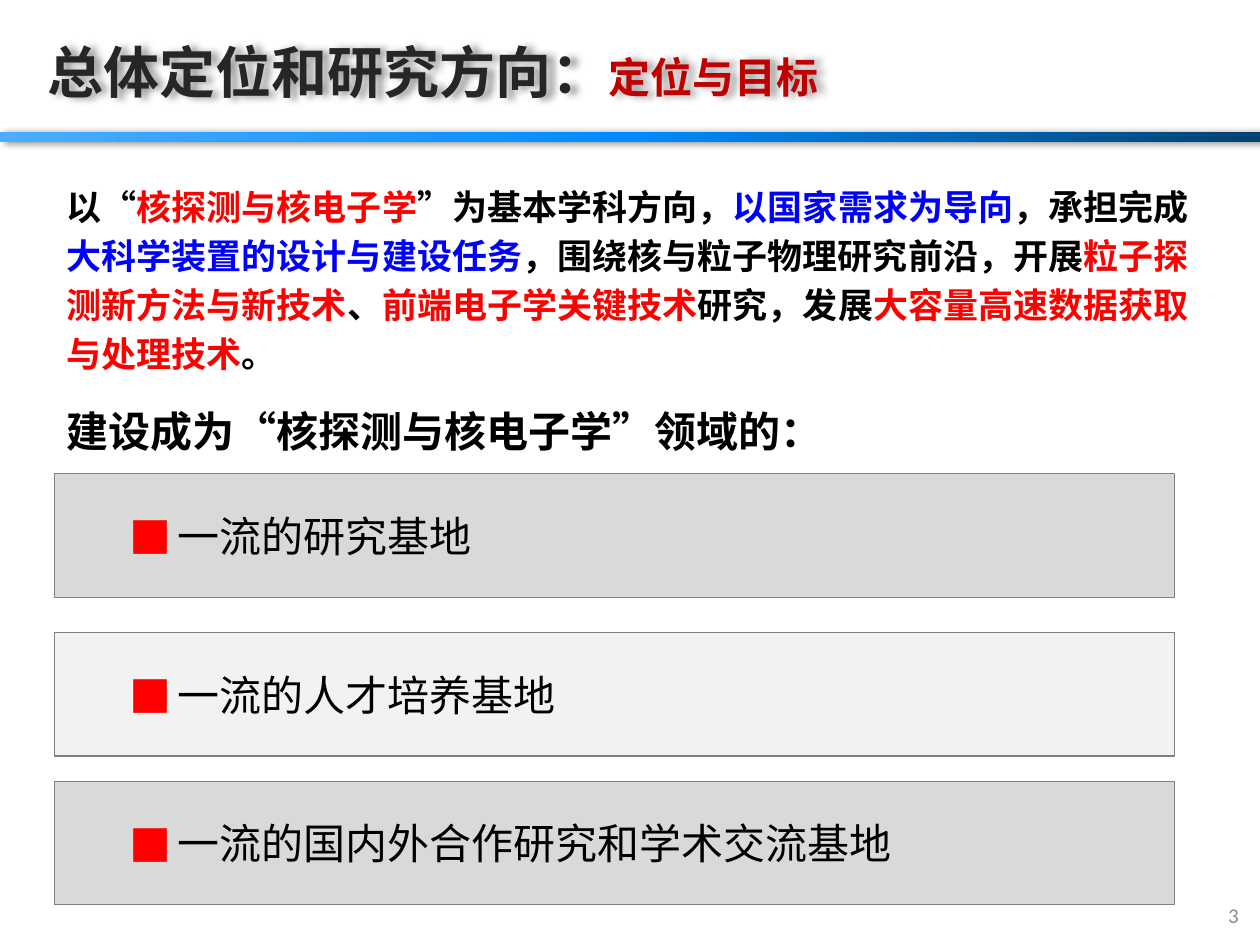
import copy
from dataclasses import dataclass

import pptx
import pptx.dml.color
import pptx.enum.lang
import pptx.enum.shapes
import pptx.enum.text
import pptx.oxml
import pptx.oxml.ns
import pptx.util
from pptx.util import Inches

CJK = "Noto Sans CJK SC"
BLACK, RED, BLUE = "000000", "FF0000", "0000FF"
LEFT = 0.43
ANCHOR = pptx.enum.text.MSO_ANCHOR
RECTANGLE = pptx.enum.shapes.MSO_SHAPE.RECTANGLE


@dataclass
class Span:
    text: str
    color: str = BLACK
    size: float | None = None


@dataclass
class Goal:
    text: str
    top: float
    fill: str


def rgb(value: str) -> pptx.dml.color.RGBColor:
    return pptx.dml.color.RGBColor.from_string(value)


def style_font(font, size: float | None = None, color: str | None = None,
               bold: bool | None = None, face: str = CJK) -> None:
    font.name = face
    font.language_id = pptx.enum.lang.MSO_LANGUAGE_ID.SIMPLIFIED_CHINESE
    font.bold = bold
    if size:
        font.size = pptx.util.Pt(size)
    if color:
        font.color.rgb = rgb(color)
    east_asian = pptx.oxml.parse_xml(
        f'<a:ea {pptx.oxml.ns.nsdecls("a")} typeface="{face}"/>')
    font._element.find(pptx.oxml.ns.qn("a:latin")).addnext(east_asian)


def add_shadow(shape) -> None:
    shape.shadow.inherit = False
    effects = shape._element.spPr.find(pptx.oxml.ns.qn("a:effectLst"))
    effects.append(pptx.oxml.parse_xml(
        f'<a:outerShdw {pptx.oxml.ns.nsdecls("a")} blurRad="50800" dist="38100" dir="0">'
        '<a:srgbClr val="000000"><a:alpha val="40000"/></a:srgbClr></a:outerShdw>'))


def add_text(slide, left: float, top: float, width: float, height: float,
             spans: list[Span], anchor=ANCHOR.TOP):
    box = slide.shapes.add_textbox(Inches(left), Inches(top), Inches(width), Inches(height))
    box.text_frame.word_wrap = True
    box.text_frame.vertical_anchor = anchor
    paragraph = box.text_frame.paragraphs[0]
    for span in spans:
        run = paragraph.add_run()
        run.text = span.text
        style_font(run.font, span.size, span.color, bold=True)
    return box


def add_rule(slide) -> None:
    rule = slide.shapes.add_shape(RECTANGLE, 0, Inches(1.05), Inches(10), Inches(0.08))
    rule.line.fill.background()
    rule.fill.gradient()
    rule.fill.gradient_angle = 180
    stops = rule._element.spPr.find(".//" + pptx.oxml.ns.qn("a:gsLst"))
    middle = copy.deepcopy(stops[0])
    middle.set("pos", "50000")
    stops.insert(1, middle)
    for stop, color in zip(rule.fill.gradient_stops, ("004272", "008BFE", "4BAEFF")):
        stop.color.rgb = rgb(color)
    add_shadow(rule)


def add_goal(slide, goal: Goal) -> None:
    bar = slide.shapes.add_shape(
        RECTANGLE, Inches(LEFT), Inches(goal.top), Inches(8.89), Inches(0.98))
    bar.shadow.inherit = False
    bar.fill.solid()
    bar.fill.fore_color.rgb = rgb(goal.fill)
    bar.line.color.rgb = rgb("808080")
    bar.line.width = pptx.util.Pt(0.75)
    bar.text_frame.word_wrap = True
    bar.text_frame.vertical_anchor = ANCHOR.MIDDLE
    paragraph = bar.text_frame.paragraphs[0]
    paragraph.text = goal.text
    paragraph.level = 1
    paragraph.alignment = pptx.enum.text.PP_ALIGN.LEFT
    style_font(paragraph.font, 24, BLACK)

    # Red square bullet with a hanging indent
    properties = paragraph._p.get_or_add_pPr()
    properties.set("marL", str(Inches(0.88)))
    properties.set("indent", str(Inches(-0.38)))
    bullet = (f'<a:buClr {{ns}}><a:srgbClr val="{RED}"/></a:buClr>',
              '<a:buFont {ns} typeface="' + CJK + '"/>',
              '<a:buChar {ns} char="■"/>')
    for position, xml in enumerate(bullet):
        properties.insert(position, pptx.oxml.parse_xml(
            xml.format(ns=pptx.oxml.ns.nsdecls("a"))))


MISSION = [
    Span("以“"), Span("核探测与核电子学", RED), Span("”为基本学科方向，"),
    Span("以国家需求为导向", BLUE), Span("，承担完成"),
    Span("大科学装置的设计与建设任务", BLUE),
    Span("，围绕核与粒子物理研究前沿，开展"),
    Span("粒子探测新方法与新技术", RED), Span("、"),
    Span("前端电子学关键技术", RED), Span("研究，发展"),
    Span("大容量高速数据获取与处理技术", RED), Span("。"),
]
GOALS = [
    Goal("一流的研究基地", 3.76, "D9D9D9"),
    Goal("一流的人才培养基地", 5.02, "F2F2F2"),
    Goal("一流的国内外合作研究和学术交流基地", 6.2, "D9D9D9"),
]


def main() -> None:
    deck = pptx.Presentation()
    deck.slide_width, deck.slide_height = Inches(10), Inches(7.5)
    slide = deck.slides.add_slide(deck.slide_layouts[6])

    # Title and rule
    title = add_text(slide, 0.28, 0.21, 9.04, 0.71, [
        Span("总体定位和研究方向：", "262626", 32), Span("定位与目标", "C00000", 24),
    ], ANCHOR.MIDDLE)
    add_shadow(title)
    add_rule(slide)

    # Mission statement
    mission = add_text(slide, LEFT, 1.37, 9.13, 1.64, MISSION).text_frame.paragraphs[0]
    mission.font.size = pptx.util.Pt(20)
    mission.line_spacing = pptx.util.Pt(28)

    # Goals
    for goal in GOALS:
        add_goal(slide, goal)
    add_text(slide, LEFT, 3.17, 6.69, 0.5,
             [Span("建设成为“核探测与核电子学”领域的：", size=24)])

    # Slide number
    number = slide.shapes.add_textbox(Inches(7.6), Inches(7.06), Inches(2.33), Inches(0.4))
    number.text_frame.vertical_anchor = ANCHOR.MIDDLE
    number.text_frame.word_wrap = True
    digit = number.text_frame.paragraphs[0]
    digit.text = "3"
    digit.alignment = pptx.enum.text.PP_ALIGN.RIGHT
    style_font(digit.font, 12, "8C8C8C", face="Calibri")

    deck.save("out.pptx")


if __name__ == "__main__":
    main()
